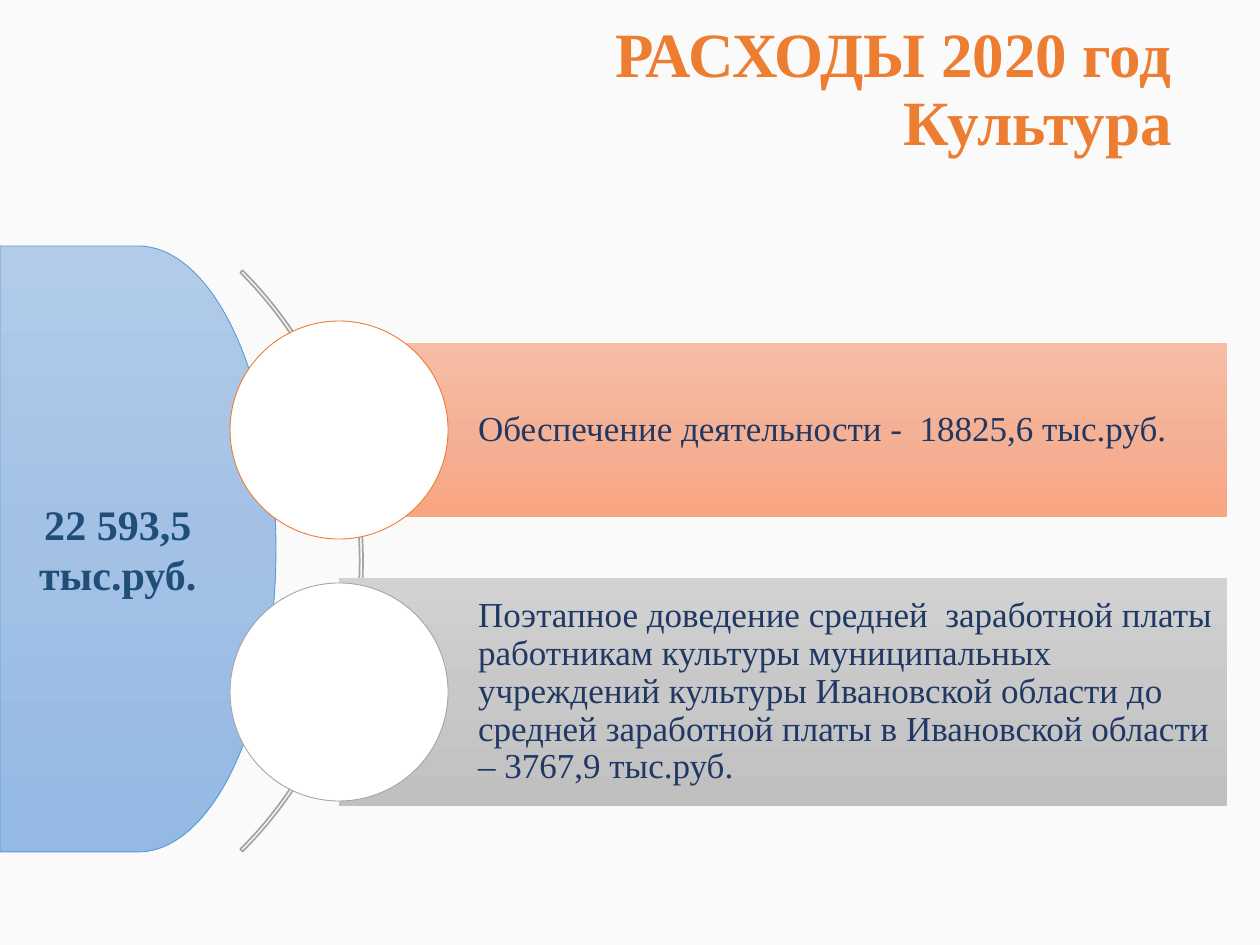
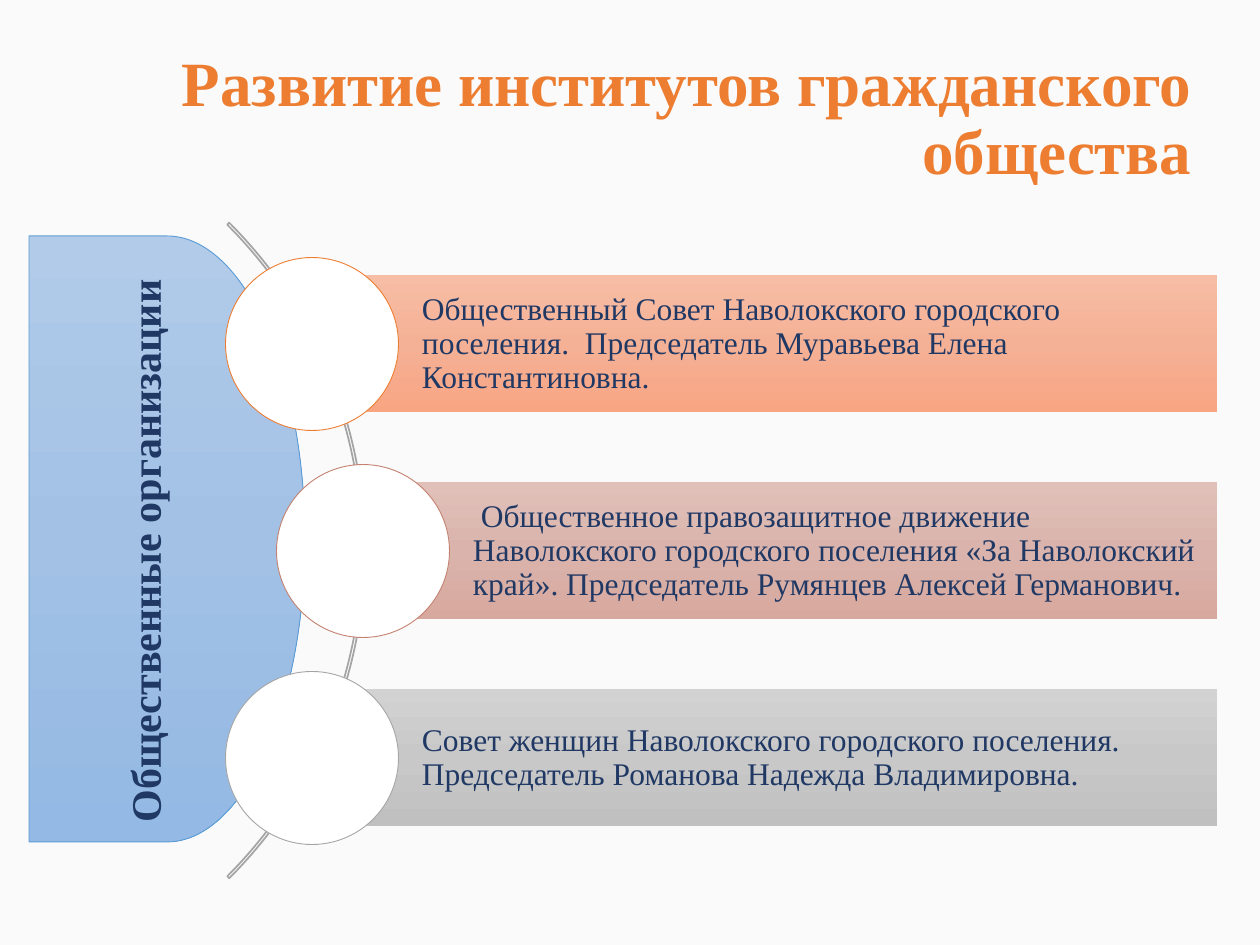
from copy import deepcopy

from pptx import Presentation
from pptx.dml.color import RGBColor as Rgb
from pptx.enum.shapes import MSO_SHAPE as Preset
from pptx.enum.text import MSO_ANCHOR as Anchor, PP_ALIGN as Align
from pptx.oxml.ns import qn
from pptx.util import Emu, Pt

PX_PER_INCH = 126
SLIDE_W, SLIDE_H = 1260, 945
FONT = "Times New Roman"

PAPER = Rgb(0xFA, 0xFA, 0xFA)
WHITE = Rgb(0xFF, 0xFF, 0xFF)
NAVY = Rgb(0x20, 0x38, 0x64)
DEEP_BLUE = Rgb(0x1F, 0x4E, 0x79)
BLUE = Rgb(0x5B, 0x9B, 0xD5)
ORANGE = Rgb(0xED, 0x7D, 0x31)
ROSE = Rgb(0xC4, 0x81, 0x70)
GRAY = Rgb(0xA5, 0xA5, 0xA5)

SHADES = {
    BLUE: (Rgb(0xB1, 0xCB, 0xE9), Rgb(0xA3, 0xC1, 0xE5), Rgb(0x93, 0xB9, 0xE4)),
    ORANGE: (Rgb(0xF7, 0xBD, 0xA5), Rgb(0xF5, 0xB1, 0x96), Rgb(0xF8, 0xA5, 0x82)),
    ROSE: (Rgb(0xE0, 0xC0, 0xB9), Rgb(0xDA, 0xB4, 0xAC), Rgb(0xD7, 0xA8, 0x9E)),
    GRAY: (Rgb(0xD2, 0xD2, 0xD2), Rgb(0xC8, 0xC8, 0xC8), Rgb(0xC0, 0xC0, 0xC0)),
}


def px(length):
    return Emu(round(length * 914400 / PX_PER_INCH))


def shade(shape, accent):
    shape.fill.gradient()
    shape.fill.gradient_angle = 270
    stop_list = shape._element.spPr.find(qn("a:gradFill")).find(qn("a:gsLst"))
    stop_list.insert(1, deepcopy(stop_list[0]))
    for index, stop in enumerate(shape.fill.gradient_stops):
        stop.position = index / 2
        stop.color.rgb = SHADES[accent][index]


def add_preset(slide, preset, box, line=None, weight=0.5):
    shape = slide.shapes.add_shape(preset, *map(px, box))
    shape.shadow.inherit = False
    if line is None:
        shape.line.fill.background()
    else:
        shape.line.color.rgb = line
        shape.line.width = Pt(weight)
    return shape


def write(shape, lines, size, color, bold=False, align=Align.LEFT, spacing=1.0):
    frame = shape.text_frame
    frame.word_wrap = True
    frame.vertical_anchor = Anchor.MIDDLE
    paragraph = frame.paragraphs[0]
    paragraph.alignment = align
    paragraph.line_spacing = spacing
    for index, line in enumerate(lines):
        if index:
            paragraph.add_line_break()
        run = paragraph.add_run()
        run.text = line
        run.font.name = FONT
        run.font.size = Pt(size)
        run.font.bold = bold
        run.font.color.rgb = color


def add_title(slide, left, top, *lines):
    title = slide.shapes.add_textbox(*map(px, (left, top, 1086, 183)))
    write(title, lines, 36, ORANGE, bold=True, align=Align.RIGHT, spacing=0.9)


def add_total_panel(slide, left, top):
    panel = add_preset(slide, Preset.FLOWCHART_DELAY, (left, top, 276, 606), BLUE)
    shade(panel, BLUE)
    return panel


def add_arc(slide, left, top, diameter, thickness):
    arc = add_preset(slide, Preset.BLOCK_ARC, (left, top, diameter, diameter), GRAY, 1)
    arc.fill.background()
    for index, value in enumerate((189, 27, thickness)):
        arc.adjustments[index] = value


def add_item(slide, text, accent, left, right, middle, height, diameter, size, inset, margin):
    bar = add_preset(
        slide, Preset.RECTANGLE, (left, middle - height / 2, right - left, height)
    )
    shade(bar, accent)
    frame = bar.text_frame
    frame.margin_left = px(inset)
    frame.margin_top = frame.margin_right = frame.margin_bottom = px(margin)
    write(bar, [text], size, NAVY, spacing=0.9)
    radius = diameter / 2
    circle = add_preset(
        slide, Preset.OVAL, (left - radius, middle - radius, diameter, diameter), accent
    )
    circle.fill.solid()
    circle.fill.fore_color.rgb = WHITE


def add_vertical_label(slide, text, center_x, center_y, length, thickness):
    box = (center_x - length / 2, center_y - thickness / 2, length, thickness)
    label = slide.shapes.add_textbox(*map(px, box))
    label.rotation = 270
    write(label, [text], 24, NAVY, bold=True, align=Align.CENTER)


def build_culture_spending(slide):
    total = add_total_panel(slide, 0, 246)
    write(total, ["22 593,5 тыс.руб."], 24, DEEP_BLUE, bold=True, align=Align.CENTER)
    add_title(slide, 98, 0, "РАСХОДЫ 2020 год", "Культура")
    add_arc(slide, -459, 150, 822, 0.004)
    spending = [
        ("Обеспечение деятельности -  18825,6 тыс.руб.", ORANGE, 430, 174),
        (
            "Поэтапное доведение средней  заработной платы работникам культуры "
            "муниципальных учреждений культуры Ивановской области до средней "
            "заработной платы в Ивановской области – 3767,9 тыс.руб.",
            GRAY, 692, 228,
        ),
    ]
    for text, accent, middle, height in spending:
        add_item(slide, text, accent, 339, 1227, middle, height,
                 diameter=218, size=20, inset=139, margin=8)


def build_civil_society(slide):
    add_total_panel(slide, 29, 236)
    add_title(slide, 118, 29, "Развитие институтов гражданского общества")
    add_arc(slide, -562, 87, 927, 0.003)
    organizations = [
        (
            "Общественный Совет Наволокского городского поселения.  "
            "Председатель Муравьева Елена Константиновна.",
            ORANGE, 312,
        ),
        (
            " Общественное правозащитное движение Наволокского городского поселения "
            "«За Наволокский край». Председатель Румянцев Алексей Германович.",
            ROSE, 363,
        ),
        (
            "Совет женщин Наволокского городского поселения. "
            "Председатель Романова Надежда Владимировна.",
            GRAY, 312,
        ),
    ]
    for row, (text, accent, left) in enumerate(organizations):
        add_item(slide, text, accent, left, 1217, 344 + 207 * row, 137,
                 diameter=173, size=18, inset=110, margin=6)
    add_vertical_label(slide, "Общественные организации", 144, 551, 610, 63)


def main():
    deck = Presentation()
    deck.slide_width, deck.slide_height = px(SLIDE_W), px(SLIDE_H)
    paper = deck.slide_master.background.fill
    paper.solid()
    paper.fore_color.rgb = PAPER
    blank = deck.slide_layouts[6]
    for build in (build_culture_spending, build_civil_society):
        build(deck.slides.add_slide(blank))
    deck.save("out.pptx")


if __name__ == "__main__":
    main()
